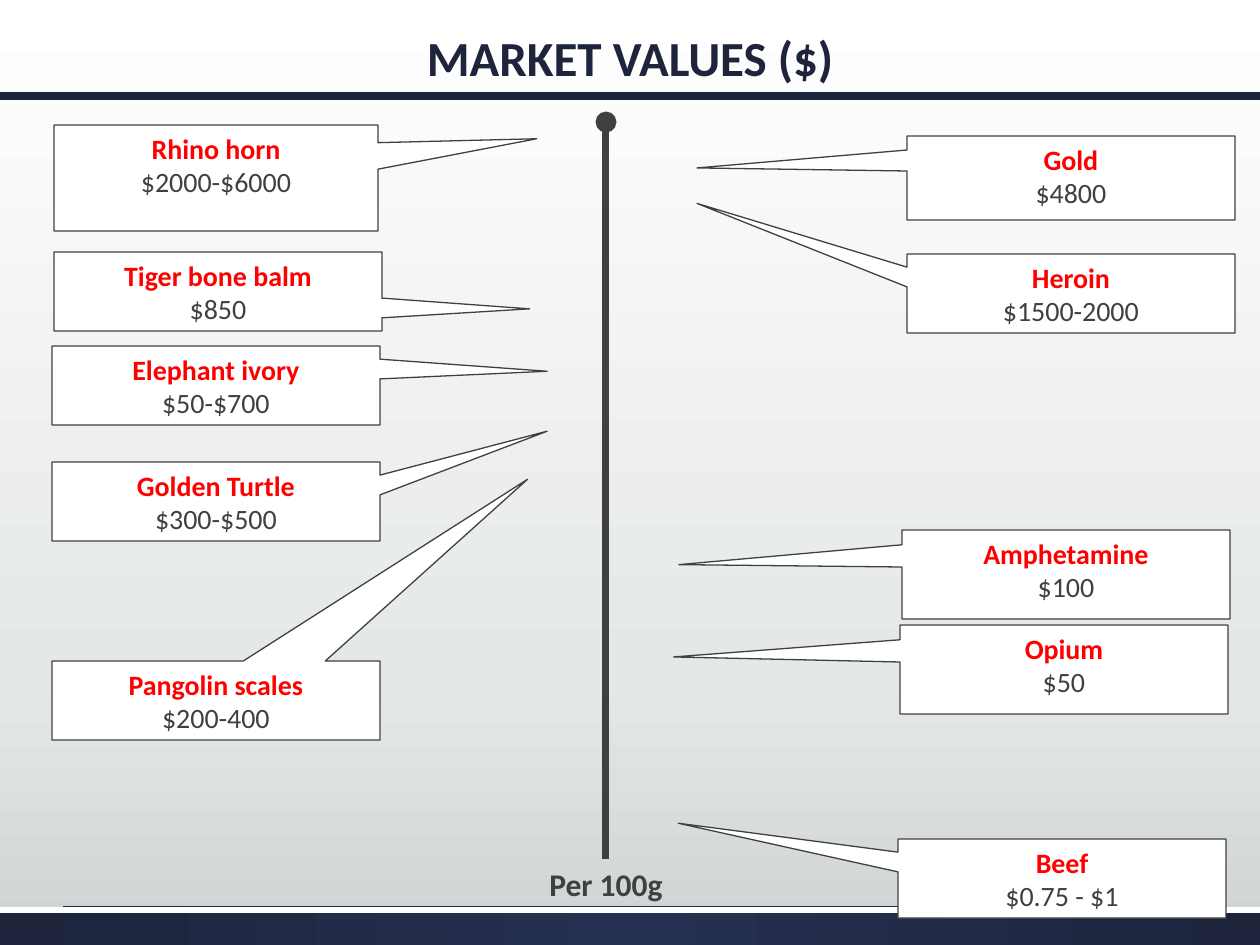
"""Build the market values slide: priced goods pointing at a vertical scale."""
from lxml.etree import SubElement
from pptx import Presentation
from pptx.dml.color import RGBColor
from pptx.enum.dml import MSO_THEME_COLOR
from pptx.enum.shapes import MSO_CONNECTOR, MSO_SHAPE
from pptx.enum.text import MSO_ANCHOR, MSO_AUTO_SIZE, PP_ALIGN
from pptx.oxml.ns import qn
from pptx.util import Pt

PX = 914400 / 126
WHITE = RGBColor(0xFF, 0xFF, 0xFF)
NAVY = RGBColor(0x1D, 0x24, 0x3C)
NAVY_LIGHT = RGBColor(0x26, 0x30, 0x50)
GREY_LIGHT = RGBColor(0xE5, 0xE8, 0xE8)
GREY = RGBColor(0xCD, 0xD2, 0xD2)
DARK = RGBColor(0x40, 0x40, 0x40)
RED = RGBColor(0xFF, 0x00, 0x00)


def write(paragraph, text, size=16, color=DARK, bold=False):
    paragraph.alignment = PP_ALIGN.CENTER
    run = paragraph.add_run()
    run.text = text
    run.font.name = "Calibri"
    run.font.size = Pt(size)
    run.font.bold = bold
    run.font.color.rgb = color


def set_gradient(gradient, stops):
    stop_list = gradient.find(qn("a:gsLst"))
    stop_list.clear()
    for position, color in stops:
        stop = SubElement(stop_list, qn("a:gs"), pos=str(position * 1000))
        SubElement(stop, qn("a:srgbClr"), val=str(color))


deck = Presentation()
deck.slide_width, deck.slide_height = round(1260 * PX), round(945 * PX)
slide = deck.slides.add_slide(deck.slide_layouts[5])
shapes = slide.shapes

backdrop = slide.background.fill
backdrop.gradient()
backdrop.gradient_angle = 270
set_gradient(slide.element.find(".//" + qn("a:gradFill")),
             [(0, WHITE), (72, GREY_LIGHT), (100, GREY)])

footer, footer_edge = [
    shapes.add_shape(MSO_SHAPE.RECTANGLE, 0, round(907 * PX),
                     deck.slide_width, round(height * PX))
    for height in (38, 6)
]
for band in (footer, footer_edge):
    band.shadow.inherit = False
    band.line.fill.background()
footer.fill.gradient()
footer_gradient = footer.element.spPr.find(qn("a:gradFill"))
set_gradient(footer_gradient, [(0, NAVY_LIGHT), (100, NAVY)])
footer_gradient.remove(footer_gradient.find(qn("a:lin")))
radial = SubElement(footer_gradient, qn("a:path"), path="circle")
SubElement(radial, qn("a:fillToRect"), l="50000", t="50000", r="50000", b="50000")
footer_edge.fill.solid()
footer_edge.fill.fore_color.rgb = WHITE

title = shapes.title
title.left, title.top, title.width, title.height = [
    round(length * PX) for length in (42, 21, 1176, 72)
]
title.text_frame.vertical_anchor = MSO_ANCHOR.BOTTOM
write(title.text_frame.paragraphs[0], "MARKET VALUES ($)", size=28, color=NAVY, bold=True)

goods = [
    ("Beef", "$0.75 - $1", 898, 839, 328, 79, -1.17, -0.7),
    ("Gold", "$4800", 907, 136, 328, 84, -1.14, -0.12),
    ("Heroin", "$1500-2000", 907, 254, 328, 79, -1.14, -1.14),
    ("Amphetamine", "$100", 902, 530, 328, 89, -1.18, -0.11),
    ("Opium", "$50", 900, 625, 328, 89, -1.19, -0.14),
    ("Tiger bone balm", "$850", 54, 252, 328, 79, 0.95, 0.22),
    ("Rhino horn", "$2000-$6000", 54, 125, 324, 106, 0.99, -0.37),
    ("Golden Turtle", "$300-$500", 52, 462, 328, 79, 1.01, -0.89),
    ("Pangolin scales", "$200-400", 52, 661, 328, 79, 0.95, -2.8),
    ("Elephant ivory", "$50-$700", 52, 346, 328, 79, 1.01, -0.18),
]
for name, price, left, top, width, height, tip_x, tip_y in goods:
    callout = shapes.add_shape(
        MSO_SHAPE.RECTANGULAR_CALLOUT,
        *[round(length * PX) for length in (left, top, width, height)])
    callout.adjustments[0] = tip_x
    callout.adjustments[1] = tip_y
    callout.shadow.inherit = False
    callout.fill.solid()
    callout.fill.fore_color.rgb = WHITE
    callout.line.color.rgb = DARK
    callout.line.width = Pt(0.75)
    frame = callout.text_frame
    frame.vertical_anchor = MSO_ANCHOR.TOP
    write(frame.paragraphs[0], name, color=RED, bold=True)
    write(frame.add_paragraph(), price)

unit = shapes.add_textbox(*[round(length * PX) for length in (476, 859, 260, 50)])
unit.text_frame.word_wrap = True
unit.text_frame.auto_size = MSO_AUTO_SIZE.SHAPE_TO_FIT_TEXT
write(unit.text_frame.paragraphs[0], "Per 100g", size=18, bold=True)

rules = [
    ((0, 96, 1260, 96), NAVY, 5, None),
    ((606, 859, 606, 122), DARK, 4, "oval"),
]
for ends, color, weight, tail in rules:
    rule = shapes.add_connector(MSO_CONNECTOR.STRAIGHT, *[round(end * PX) for end in ends])
    rule.line.color.rgb = color
    rule.line.width = Pt(weight)
    if tail:
        SubElement(rule.line._get_or_add_ln(), qn("a:tailEnd"), type=tail)
    SubElement(rule.element.spPr, qn("a:effectLst"))

deck.save("out.pptx")
